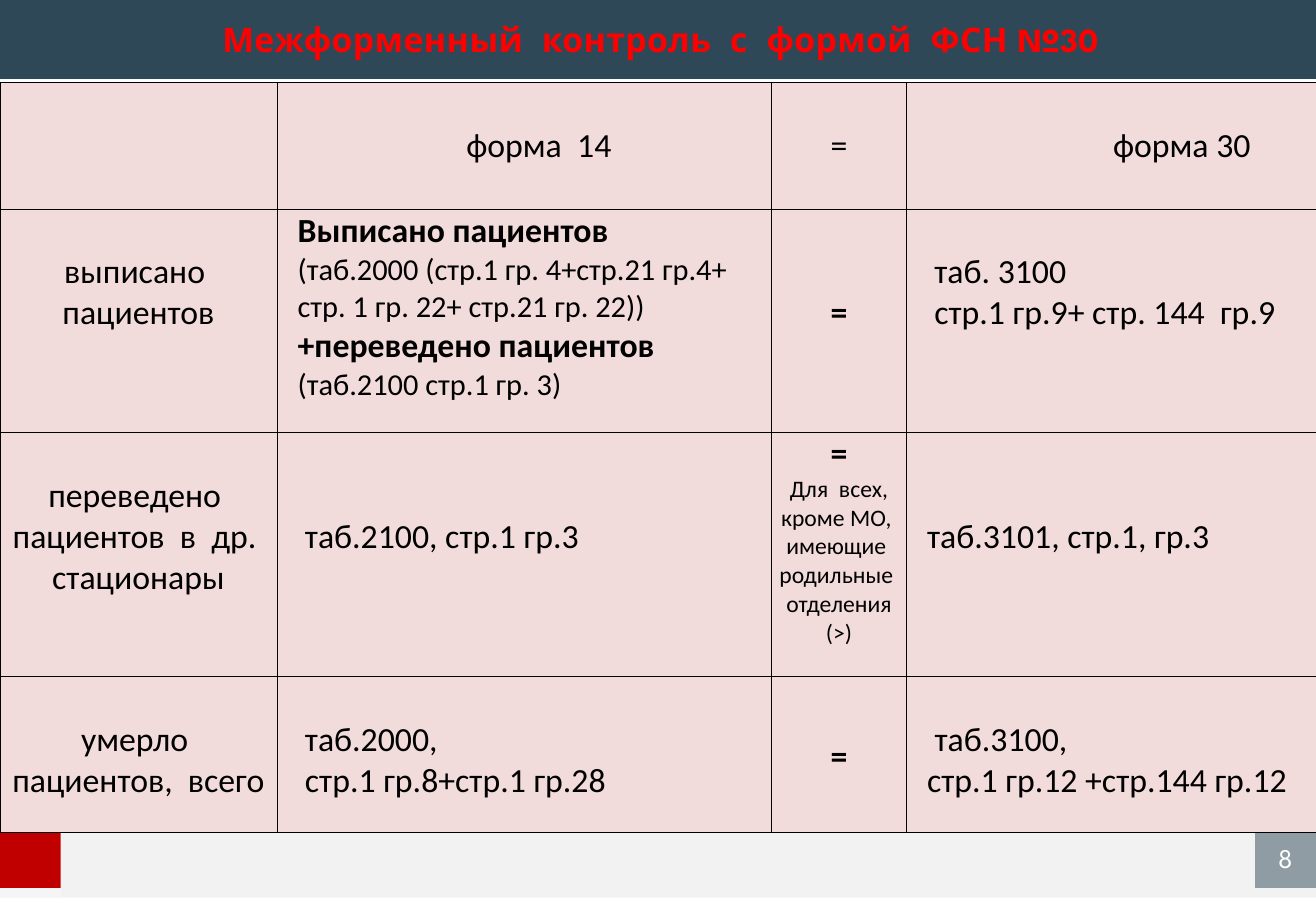
from lxml import etree
from pptx import Presentation
from pptx.dml.color import RGBColor
from pptx.enum.shapes import MSO_SHAPE
from pptx.enum.text import MSO_ANCHOR, PP_ALIGN
from pptx.oxml.ns import qn
from pptx.util import Inches, Pt

COLORS = {
    "navy": "2F4858",
    "footer": "F2F2F2",
    "white": "FFFFFF",
    "accent": "C00000",
    "title": "FF0000",
    "cell": "F2DCDB",
    "black": "000000",
}
HEADING_FONT = "League Spartan"
TABLE_FONT = "Calibri"
WIDTH = 10.83
LINE = 0.34
COLUMNS = [2.28, 4.07, 1.11, 3.37]
ROWS = [1.04, 1.84, 2.01, 1.28]

# fmt: off
CELLS = [
    [
        (PP_ALIGN.CENTER, 0.01, 0, []),
        (PP_ALIGN.CENTER, 0.25, LINE, [("форма  14", 20, False)]),
        (PP_ALIGN.CENTER, 0.01, LINE, [("=", 20, False)]),
        (PP_ALIGN.LEFT, 1.7, LINE, [("форма 30", 20, False)]),
    ],
    [
        (PP_ALIGN.CENTER, 0.01, LINE, [("выписано  пациентов", 20, False)]),
        (PP_ALIGN.LEFT, 0.17, 0, [
            ("Выписано пациентов", 20, True),
            ("(таб.2000 (стр.1 гр. 4+стр.21 гр.4+", 18, False),
            ("стр. 1 гр. 22+ стр.21 гр. 22))", 18, False),
            ("+переведено пациентов", 20, True),
            ("(таб.2100 стр.1 гр. 3)", 18, False),
        ]),
        (PP_ALIGN.CENTER, 0.01, 2 * LINE, [("=", 20, True)]),
        (PP_ALIGN.LEFT, 0.23, LINE, [
            ("таб. 3100", 20, False),
            ("стр.1 гр.9+ стр. 144  гр.9", 20, False),
        ]),
    ],
    [
        (PP_ALIGN.CENTER, 0.01, LINE,
         [("переведено  пациентов  в  др.  стационары", 20, False)]),
        (PP_ALIGN.LEFT, 0.23, 2 * LINE, [("таб.2100, стр.1 гр.3", 20, False)]),
        (PP_ALIGN.CENTER, 0.01, 0, [
            ("=", 20, True),
            ("Для  всех,", 14, False),
            ("кроме МО,  имеющие  родильные  отделения", 14, False),
            ("(>)", 14, False),
        ]),
        (PP_ALIGN.LEFT, 0.17, 2 * LINE, [("таб.3101, стр.1, гр.3", 20, False)]),
    ],
    [
        (PP_ALIGN.CENTER, 0.01, LINE, [("умерло  пациентов,  всего", 20, False)]),
        (PP_ALIGN.LEFT, 0.23, LINE, [
            ("таб.2000,", 20, False),
            ("стр.1 гр.8+стр.1 гр.28", 20, False),
        ]),
        (PP_ALIGN.CENTER, 0.01, 0.48, [("=", 20, True)]),
        (PP_ALIGN.LEFT, 0.17, LINE, [
            (" таб.3100,", 20, False),
            ("стр.1 гр.12 +стр.144 гр.12", 20, False),
        ]),
    ],
]
# fmt: on


def rgb(name):
    return RGBColor.from_string(COLORS[name])


def style_paragraph(p, font, size, color, bold=False, align=PP_ALIGN.CENTER):
    p.alignment = align
    p.font.name = font
    p.font.size = Pt(size)
    p.font.bold = bold
    p.font.color.rgb = rgb(color)


def add_block(s, x, y, w, h, color, opacity=100):
    sp = s.shapes.add_shape(
        MSO_SHAPE.RECTANGLE, Inches(x), Inches(y), Inches(w), Inches(h)
    )
    sp.shadow.inherit = False
    sp.fill.solid()
    sp.fill.fore_color.rgb = rgb(color)
    sp.line.fill.background()
    if opacity < 100:
        clr = sp.fill._xPr.find(".//" + qn("a:srgbClr"))
        etree.SubElement(clr, qn("a:alpha"), val=str(opacity * 1000))
    return sp


def add_title(s, text):
    box = s.shapes.add_textbox(Inches(0.65), 0, Inches(9.57), Inches(0.65))
    tf = box.text_frame
    tf.word_wrap = True
    tf.vertical_anchor = MSO_ANCHOR.MIDDLE
    tf.margin_left = tf.margin_right = tf.margin_top = tf.margin_bottom = 0
    p = tf.paragraphs[0]
    r = p.add_run()
    r.text = text
    r._r.get_or_add_rPr().set("spc", "20")
    style_paragraph(p, HEADING_FONT, 20, "title", bold=True)
    p.space_before = Pt(4)


def add_page_number(s, number):
    sp = add_block(s, WIDTH - 0.5, 6.81, 0.5, 0.5, "navy", 50)
    tf = sp.text_frame
    tf.vertical_anchor = MSO_ANCHOR.MIDDLE
    tf.text = number
    style_paragraph(tf.paragraphs[0], HEADING_FONT, 16, "white")


def set_borders(cell, width):
    tcPr = cell._tc.get_or_add_tcPr()
    for i, side in enumerate(("lnL", "lnR", "lnT", "lnB")):
        ln = etree.Element(qn("a:" + side), w=str(Pt(width)))
        fill = etree.SubElement(ln, qn("a:solidFill"))
        etree.SubElement(fill, qn("a:srgbClr"), val=COLORS["black"])
        tcPr.insert(i, ln)


def fill_cell(cell, align, left, top, lines):
    cell.fill.solid()
    cell.fill.fore_color.rgb = rgb("cell")
    cell.margin_left = Inches(left)
    cell.margin_right = Inches(0.01)
    cell.margin_top = Inches(top + 0.01)
    cell.margin_bottom = 0
    set_borders(cell, 0.5)
    tf = cell.text_frame
    tf.text = "\n".join(text for text, _, _ in lines)
    for p, (_, size, bold) in zip(tf.paragraphs, lines):
        style_paragraph(p, TABLE_FONT, size, "black", bold, align)


def add_control_table(s):
    frame = s.shapes.add_table(
        len(ROWS), len(COLUMNS), 0, Inches(0.68), Inches(WIDTH), Inches(sum(ROWS))
    )
    table = frame.table
    for column, width in zip(table.columns, COLUMNS):
        column.width = Inches(width)
    for row, height, contents in zip(table.rows, ROWS, CELLS):
        row.height = Inches(height)
        for cell, content in zip(row.cells, contents):
            fill_cell(cell, *content)


def main():
    prs = Presentation()
    prs.slide_width = Inches(WIDTH)
    prs.slide_height = Inches(7.5)
    s = prs.slides.add_slide(prs.slide_layouts[6])
    add_block(s, 0, 6.73, WIDTH, 0.66, "footer")
    add_block(s, 0, 0, WIDTH, 0.65, "navy")
    add_block(s, 0, 6.73, 0.5, 0.66, "white", 30)
    add_block(s, 0, 6.81, 0.5, 0.5, "accent")
    add_page_number(s, "8")
    add_title(s, "Межформенный  контроль  с  формой  ФСН №30")
    add_control_table(s)
    prs.save("out.pptx")


if __name__ == "__main__":
    main()
